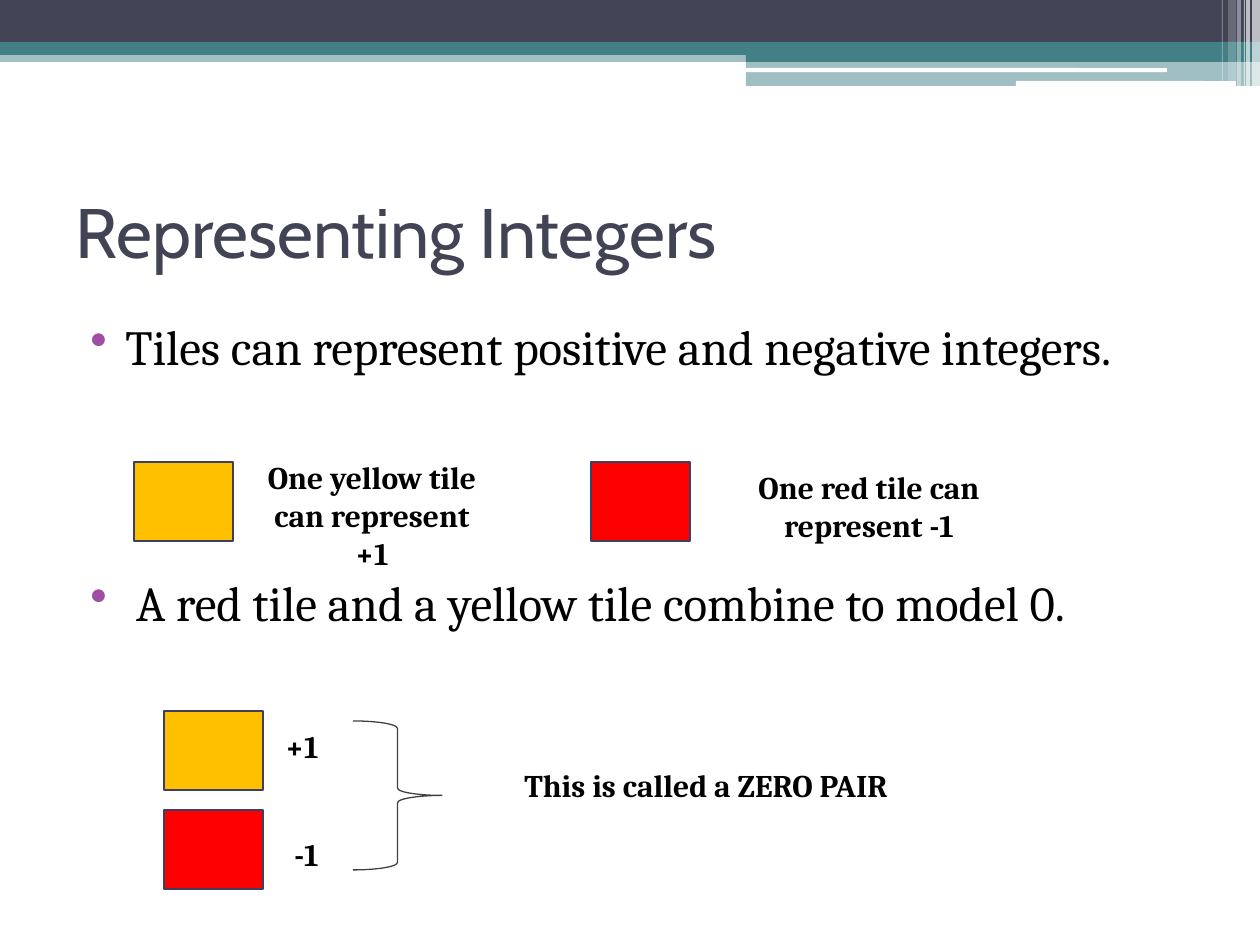
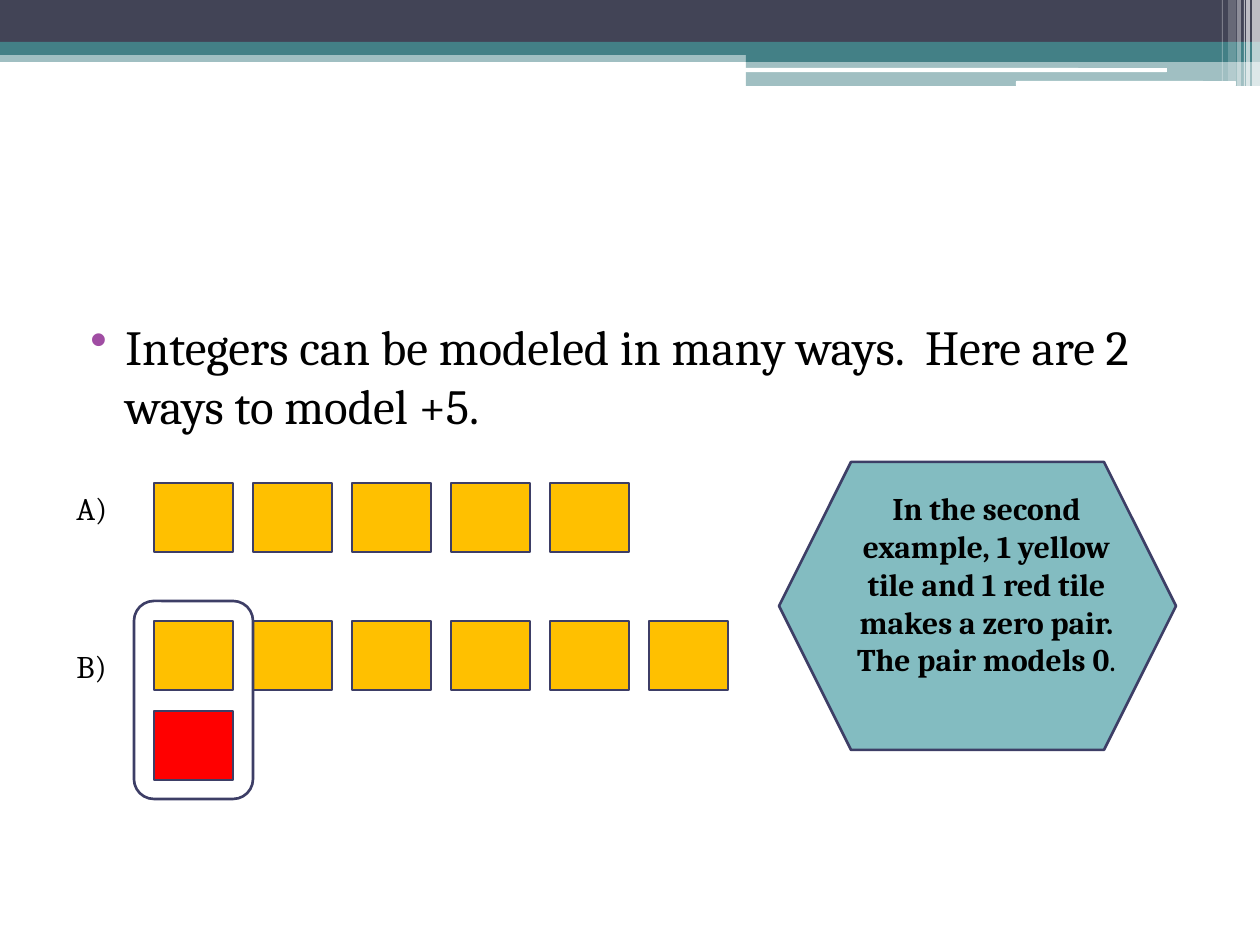
"""Build two slides that model integers with yellow and red tiles."""
from lxml import etree
from pptx import Presentation
from pptx.dml.color import RGBColor
from pptx.enum.shapes import MSO_SHAPE
from pptx.enum.text import MSO_ANCHOR, PP_ALIGN
from pptx.oxml.ns import qn
from pptx.util import Pt

RECT, ROUNDED = MSO_SHAPE.RECTANGLE, MSO_SHAPE.ROUNDED_RECTANGLE
BRACE, HEXAGON = MSO_SHAPE.RIGHT_BRACE, MSO_SHAPE.HEXAGON
LEFT, CENTER, MIDDLE = PP_ALIGN.LEFT, PP_ALIGN.CENTER, MSO_ANCHOR.MIDDLE
TITLE_ONLY, BLANK = 5, 6
SCALE = 914400 / 126
SLATE, TEAL, WHITE, BLACK = "424456", "438086", "FFFFFF", "000000"
YELLOW, RED, AQUA = "FFC000", "FF0000", "83BCC1"
OUTLINE, BULLET = "3D3E66", "A04DA3"
color = RGBColor.from_string
BODY = {"name": "Cambria", "size": Pt(28)}
LABEL = {"name": "Cambria", "size": Pt(18), "bold": True}
PLAIN = {**LABEL, "bold": False}


def add_block(page, frame, fill=None, line=None, kind=RECT, width=1.5, opacity=100):
    """Add a preset shape; frame is left, top, width, height in px."""
    block = page.shapes.add_shape(kind, *(round(n * SCALE) for n in frame))
    block.shadow.inherit = False
    for part, value in ((block.fill, fill), (block.line.fill, line)):
        if value:
            part.solid()
            part.fore_color.rgb = color(value)
        else:
            part.background()
    if line:
        block.line.width = Pt(width)
    if opacity < 100:
        for tone in block.element.spPr.iter(qn("a:srgbClr")):
            etree.SubElement(tone, qn("a:alpha"), val=str(opacity * 1000))
    return block


def add_text(page, frame, texts, style, align=LEFT, gaps=None):
    """Add a text box; gaps gives each paragraph a bullet and space before in points."""
    box = page.shapes.add_textbox(*(round(n * SCALE) for n in frame))
    box.text_frame.word_wrap = True
    for index, spans in enumerate(texts):
        para = box.text_frame.paragraphs[0] if index == 0 else box.text_frame.add_paragraph()
        para.alignment = align
        for text, changes in spans:
            span = para.add_run()
            span.text = text
            span.font.color.rgb = color(BLACK)
            for name, value in {**style, **changes}.items():
                setattr(span.font, name, value)
        if gaps:
            para.space_before = Pt(gaps[index])
            props = para._p.get_or_add_pPr()
            props.set("marL", str(round(50 * SCALE)))
            props.set("indent", str(round(-35 * SCALE)))
            tint = etree.SubElement(props, qn("a:buClr"))
            etree.SubElement(tint, qn("a:srgbClr"), val=BULLET)
            etree.SubElement(props, qn("a:buChar"), char="•")


deck = Presentation()
deck.slide_width, deck.slide_height = round(1260 * SCALE), round(945 * SCALE)
page = deck.slides.add_slide(deck.slide_layouts[TITLE_ONLY])

bands = [
    ((0, 50, 1260, 12), TEAL, 50, RECT),
    ((0, 0, 1260, 43), SLATE, 100, RECT),
    ((0, 42, 1260, 13), TEAL, 100, RECT),
    ((746, 49, 514, 13), TEAL, 100, RECT),
    ((746, 61, 514, 25), TEAL, 50, RECT),
    ((745, 68, 422, 4), WHITE, 100, ROUNDED),
    ((1016, 81, 220, 5), WHITE, 100, ROUNDED),
]
stripes = [(1252, 8, 86, 65), (1246, 4, 86, 65), (1244, 1, 86, 60),
           (1237, 4, 86, 40), (1228, 8, 81, 20), (1222, 1, 81, 30)]
bands += [((left, 0, width, height), WHITE, opacity, RECT)
          for left, width, height, opacity in stripes]
for number, (frame, fill, opacity, kind) in enumerate(bands, 101):
    band = add_block(page, frame, fill, kind=kind, opacity=opacity)
    band.element.nvSpPr.cNvPr.set("id", str(number))
    deck.slide_master.shapes.element.append(band.element)

title = page.shapes.title
for name, value in zip(("left", "top", "width", "height"), (63, 157, 1134, 147)):
    setattr(title, name, round(value * SCALE))
title.text_frame.text = "Representing Integers"
title.text_frame.vertical_anchor = MIDDLE
heading = title.text_frame.paragraphs[0]
heading.alignment = LEFT
for name, value in {"name": "Cabin", "size": Pt(40)}.items():
    setattr(heading.runs[0].font, name, value)
heading.runs[0].font.color.rgb = color(SLATE)

BODY_FRAME = (63, 310, 1134, 596)
add_text(page, BODY_FRAME,
         [[("Tiles can represent positive and negative integers.", {})],
          [(" A red tile and a yellow tile combine to model 0.", {})]],
         BODY, gaps=(3, 113))
for left, top, fill in ((134, 462, YELLOW), (591, 462, RED), (164, 711, YELLOW), (164, 810, RED)):
    add_block(page, (left, top, 99, 79), fill, OUTLINE)
for frame, text, align in (
    ((243, 452, 258, 127), "One yellow tile can represent +1", CENTER),
    ((740, 462, 258, 127), "One red tile can represent -1", CENTER),
    ((273, 721, 159, 50), "+1", LEFT),
    ((282, 829, 89, 50), "-1", LEFT),
    ((512, 760, 515, 50), "This is called a ZERO PAIR", LEFT),
):
    add_text(page, frame, [[(text, {})]], LABEL, align)
add_block(page, (353, 721, 89, 149), line=BLACK, kind=BRACE, width=0.75, opacity=75)

page = deck.slides.add_slide(deck.slide_layouts[BLANK])
add_text(page, BODY_FRAME,
         [[("Integers can be modeled in many ways.  Here are 2 ways to model +5.", {})]],
         BODY, gaps=(3,))
for top, count, fill in ((483, 5, YELLOW), (621, 6, YELLOW), (711, 1, RED)):
    for column in range(count):
        add_block(page, (154 + 99 * column, top, 79, 69), fill, OUTLINE)
add_block(page, (134, 601, 119, 198), line=OUTLINE, kind=ROUNDED)
for top, text in ((483, "A)"), (641, "B)")):
    add_text(page, (64, top, 79, 50), [[(text, {})]], PLAIN)
hexagon = add_block(page, (779, 462, 397, 288), AQUA, OUTLINE, HEXAGON)
add_text(page, (838, 483, 297, 242),
         [[("In the second example, 1 yellow tile and 1 red tile makes a zero pair. "
            "The pair models 0", {}), (".", {"bold": False})]],
         LABEL, CENTER)

deck.save("out.pptx")
